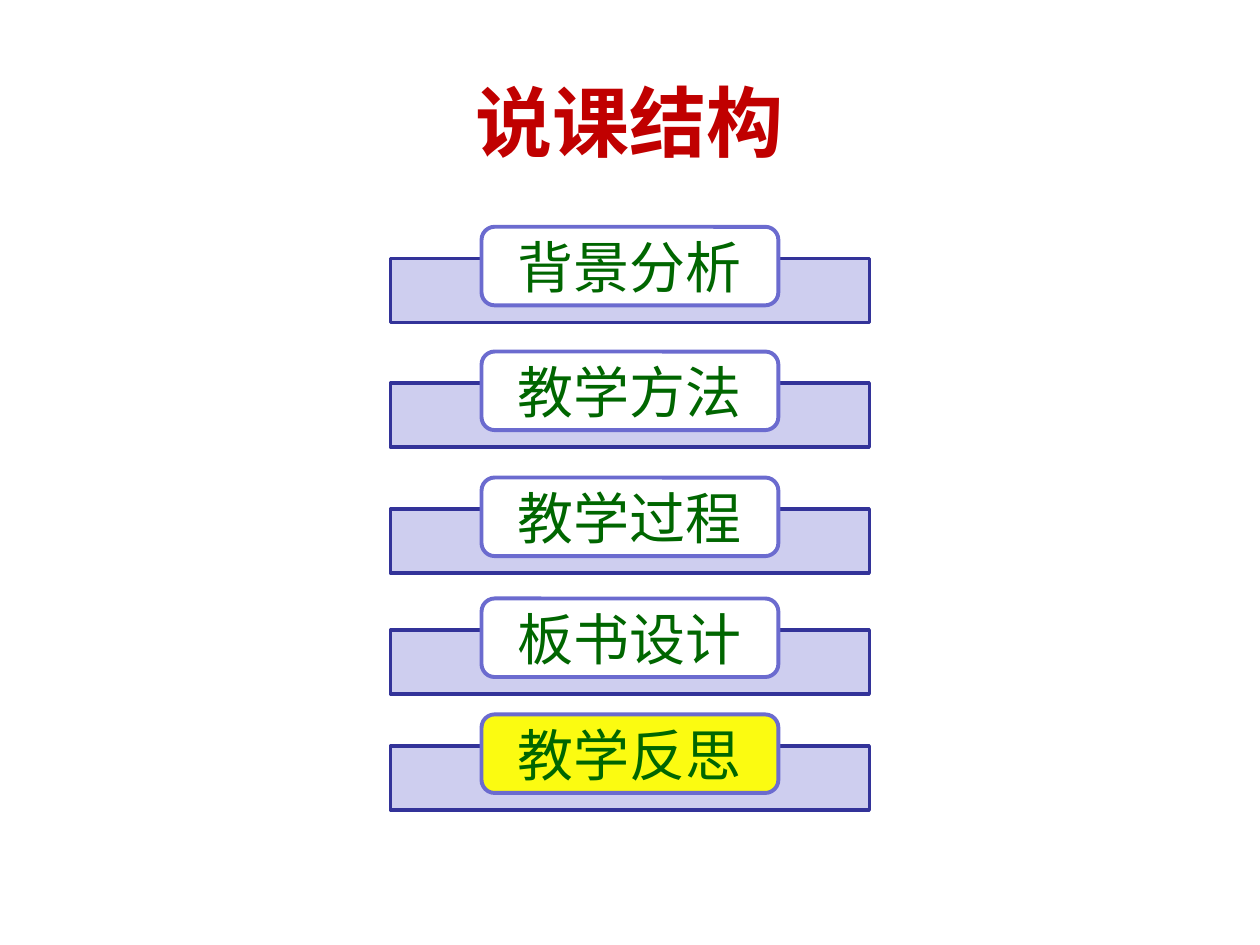
import pptx
import pptx.util
import pptx.dml.color
import pptx.enum.shapes
import pptx.enum.text
import pptx.oxml
import pptx.oxml.ns
from collections import namedtuple
from dataclasses import dataclass

Box = namedtuple("Box", "left top width height")
KIND = pptx.enum.shapes.MSO_SHAPE


@dataclass(frozen=True)
class Theme:
    red: str = "C00000"
    green: str = "006600"
    navy: str = "333399"
    violet: str = "6B6BCF"
    pale: str = "CECEEF"
    white: str = "FFFFFF"
    yellow: str = "FBFB11"
    latin: str = "Arial"
    han: str = "Noto Sans CJK SC"
    head: int = 44
    label: int = 32


THEME = Theme()
PAGE = Box(0, 0, 10, 7.5)
TITLE = Box(1.1, 0.49, 7.8, 0.94)
# Label, top of its row in inches, fill of its tag
ROWS = [
    ("背景分析", 1.8, THEME.white),
    ("教学方法", 2.79, THEME.white),
    ("教学过程", 3.79, THEME.white),
    ("板书设计", 4.75, THEME.white),
    ("教学反思", 5.67, THEME.yellow),
]


def color(code):
    return pptx.dml.color.RGBColor.from_string(code)


def part(box, x, y, w, h):
    """Return the part of a box given by shares of its size."""
    return Box(box.left + x * box.width, box.top + y * box.height,
               w * box.width, h * box.height)


def place(shape, box):
    for name, size in box._asdict().items():
        setattr(shape, name, pptx.util.Inches(size))


def write(shape, text, hue, **form):
    """Put one centred line of formatted text in a shape."""
    frame = shape.text_frame
    frame.word_wrap = True
    frame.auto_size = pptx.enum.text.MSO_AUTO_SIZE.NONE
    frame.vertical_anchor = pptx.enum.text.MSO_ANCHOR.MIDDLE
    line = frame.paragraphs[0]
    line.alignment = pptx.enum.text.PP_ALIGN.CENTER
    run = line.add_run()
    run.text = text
    for name, value in form.items():
        setattr(run.font, name, value)
    run.font.color.rgb = color(hue)
    return run


def panel(group, kind, box, fill, edge, width):
    shape = group.shapes.add_shape(
        kind, *(pptx.util.Inches(size) for size in box))
    shape.shadow.inherit = False
    shape.fill.solid()
    shape.fill.fore_color.rgb = color(fill)
    shape.line.color.rgb = color(edge)
    shape.line.width = pptx.util.Pt(width)
    return shape


def title(slide, box):
    shape = slide.shapes.title
    place(shape, box)
    write(shape, "说课结构", THEME.red, name=THEME.latin,
          size=pptx.util.Pt(THEME.head), bold=True)


def row(slide, box, text, fill):
    """Draw a bar with a rounded tag over its upper edge."""
    group = slide.shapes.add_group_shape()
    panel(group, KIND.RECTANGLE, part(box, 0, 0.33, 1, 0.67),
          THEME.pale, THEME.navy, 2)
    tag = panel(group, KIND.ROUNDED_RECTANGLE, part(box, 0.19, 0, 0.62, 0.82),
                fill, THEME.violet, 2.25)
    for side in ("left", "right", "top", "bottom"):
        setattr(tag.text_frame, f"margin_{side}", 0)
    run = write(tag, text, THEME.green, name=THEME.han,
                size=pptx.util.Pt(THEME.label), bold=False)
    east = pptx.oxml.parse_xml(
        f'<a:ea {pptx.oxml.ns.nsdecls("a")} typeface="{THEME.han}"/>')
    run.font._element.find(pptx.oxml.ns.qn("a:latin")).addnext(east)


def main():
    deck = pptx.Presentation()
    deck.slide_width = pptx.util.Inches(PAGE.width)
    deck.slide_height = pptx.util.Inches(PAGE.height)
    slide = deck.slides.add_slide(deck.slide_layouts[5])
    title(slide, TITLE)
    for text, top, fill in ROWS:
        box = part(PAGE, 0.31, top / PAGE.height, 0.38, 0.1)
        row(slide, box._replace(height=0.76), text, fill)
    deck.save("out.pptx")


if __name__ == "__main__":
    main()
